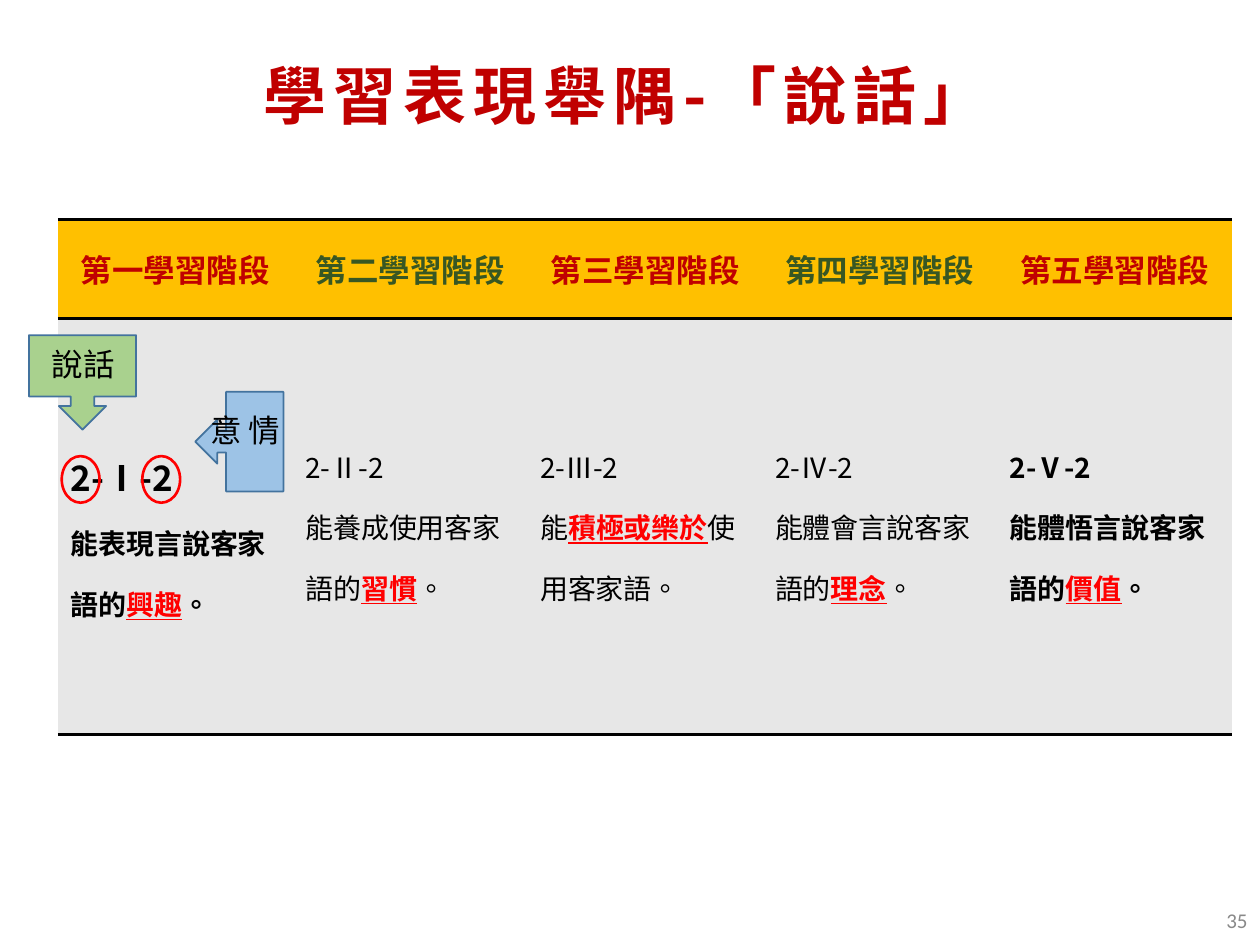
from lxml.etree import SubElement
from pptx import Presentation
from pptx.dml.color import RGBColor
from pptx.enum.lang import MSO_LANGUAGE_ID
from pptx.enum.shapes import MSO_SHAPE
from pptx.enum.text import MSO_ANCHOR, PP_ALIGN
from pptx.oxml import parse_xml
from pptx.oxml.ns import nsdecls, qn
from pptx.util import Inches, Pt

CJK_FONT = "Noto Sans CJK SC"
RED, GREEN, BLACK = "C00000", "385723", "000000"
HIGHLIGHT = dict(color="FF0000", bold=True, underline=True)

# heading, code, text before the key word, key word, text after it
STAGES = [
    ("第一學習階段", "2-Ⅰ-2", "能表現言說客家語的", "興趣", "。"),
    ("第二學習階段", "2-Ⅱ-2", "能養成使用客家語的", "習慣", "。"),
    ("第三學習階段", "2-Ⅲ-2", "能", "積極或樂於", "使用客家語。"),
    ("第四學習階段", "2-Ⅳ-2", "能體會言說客家語的", "理念", "。"),
    ("第五學習階段", "2-Ⅴ-2", "能體悟言說客家語的", "價值", "。"),
]


def rgb(value):
    return RGBColor.from_string(value)


def add_run(paragraph, text, size=18, color=BLACK, bold=False, underline=False,
            font=CJK_FONT, tracking=0):
    run = paragraph.add_run()
    run.text = text
    run.font.size = Pt(size)
    run.font.bold = bold
    run.font.underline = underline
    run.font.name = font
    run.font.color.rgb = rgb(color)
    run.font.language_id = MSO_LANGUAGE_ID.TAIWAN if hasattr(
        MSO_LANGUAGE_ID, "TAIWAN") else MSO_LANGUAGE_ID.TRADITIONAL_CHINESE
    properties = run.font._element
    SubElement(properties, qn("a:ea")).set("typeface", font)
    if tracking:
        properties.set("spc", str(tracking * 100))


def write_paragraph(paragraph, text, align=PP_ALIGN.LEFT, line_spacing=1.0, **style):
    paragraph.alignment = align
    paragraph.line_spacing = line_spacing
    add_run(paragraph, text, **style)


def add_text(slide, box, text, anchor=MSO_ANCHOR.TOP, vertical=False, **style):
    text_frame = slide.shapes.add_textbox(*map(Inches, box)).text_frame
    text_frame.word_wrap = True
    text_frame.vertical_anchor = anchor
    if vertical:
        text_frame._txBody.bodyPr.set("vert", "eaVert")
    write_paragraph(text_frame.paragraphs[0], text, **style)


def add_outlined_shape(slide, kind, box, line, line_width, fill=None):
    shape = slide.shapes.add_shape(kind, *map(Inches, box))
    shape.shadow.inherit = False
    if fill:
        shape.fill.solid()
        shape.fill.fore_color.rgb = rgb(fill)
    else:
        shape.fill.background()
    shape.line.color.rgb = rgb(line)
    shape.line.width = Pt(line_width)


def format_cell(cell, fill):
    """Fill the cell and rule its top and bottom edges."""
    properties = cell._tc.get_or_add_tcPr()
    rule = f'<a:solidFill><a:srgbClr val="{BLACK}"/></a:solidFill>'
    for tag, paint in (("lnL", "<a:noFill/>"), ("lnR", "<a:noFill/>"),
                       ("lnT", rule), ("lnB", rule)):
        properties.append(parse_xml(
            f'<a:{tag} {nsdecls("a")} w="{Pt(2)}">{paint}</a:{tag}>'))
    cell.fill.solid()
    cell.fill.fore_color.rgb = rgb(fill)


def add_stage_table(slide, box, header_height):
    left, top, width, height = map(Inches, box)
    table = slide.shapes.add_table(2, len(STAGES), left, top, width, height).table
    table.first_row = table.horz_banding = False
    table.rows[0].height = Inches(header_height)
    table.rows[1].height = height - Inches(header_height)

    for index, (heading, code, before, key_word, after) in enumerate(STAGES):
        is_first = index == 0
        is_edge = index in (0, len(STAGES) - 1)
        header, body = table.cell(0, index), table.cell(1, index)

        format_cell(header, "FFC000")
        header.vertical_anchor = MSO_ANCHOR.MIDDLE
        write_paragraph(header.text_frame.paragraphs[0], heading,
                        align=PP_ALIGN.CENTER, bold=True,
                        color=GREEN if index % 2 else RED)

        format_cell(body, "E7E7E7")
        body.margin_top = Inches(0.85)
        write_paragraph(body.text_frame.paragraphs[0], code, line_spacing=1.5,
                        size=20 if is_first else 16, bold=is_edge)
        sentence = body.text_frame.add_paragraph()
        write_paragraph(sentence, before, line_spacing=1.5, size=16, bold=is_edge)
        add_run(sentence, key_word, size=16, **HIGHLIGHT)
        add_run(sentence, after, size=16, bold=is_edge)


def add_code_callouts(slide, left, top):
    """Circle both digits of the first code and label each with a callout."""
    for offset in (0.26, 0.9):
        add_outlined_shape(slide, MSO_SHAPE.OVAL,
                           (left + offset, top + 0.96, 0.3, 0.37), "FF0000", 1.5)
    add_outlined_shape(slide, MSO_SHAPE.DOWN_ARROW_CALLOUT,
                       (left, top, 0.85, 0.75), "43739E", 1, fill="A9D18E")
    add_text(slide, (left - 0.01, top + 0.03, 0.88, 0.4), "說話",
             align=PP_ALIGN.CENTER)
    add_outlined_shape(slide, MSO_SHAPE.LEFT_ARROW_CALLOUT,
                       (left + 1.32, top + 0.45, 0.7, 0.79), "43739E", 1, fill="9DC3E6")
    add_text(slide, (left + 1.56, top + 0.53, 0.5, 0.65), "情意", vertical=True)


def main():
    presentation = Presentation()
    presentation.slide_width, presentation.slide_height = Inches(10), Inches(7.5)
    slide = presentation.slides.add_slide(presentation.slide_layouts[6])

    add_text(slide, (0.65, 0, 8.62, 1.57), "學習表現舉隅-「說話」",
             anchor=MSO_ANCHOR.MIDDLE, align=PP_ALIGN.CENTER, line_spacing=0.9,
             size=36, color=RED, bold=True, tracking=4)
    add_stage_table(slide, (0.46, 1.74, 9.32, 4.09), header_height=0.79)
    add_text(slide, (7.75, 7.1, 2.25, 0.4), "35", anchor=MSO_ANCHOR.MIDDLE,
             align=PP_ALIGN.RIGHT, size=12, color="898989", font="Calibri")
    add_code_callouts(slide, left=0.23, top=2.66)
    presentation.save("out.pptx")


if __name__ == "__main__":
    main()
